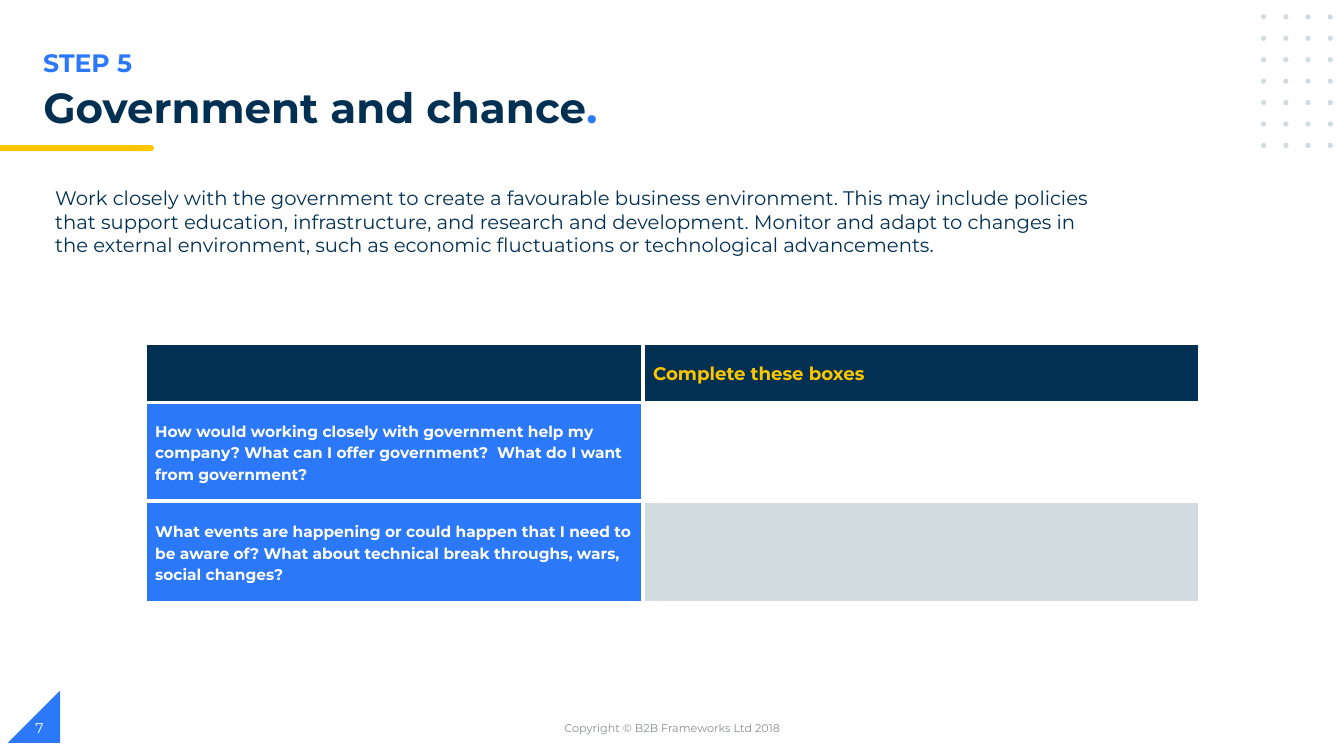
from lxml import etree
from pptx import Presentation, util as u
from pptx.dml.color import RGBColor
from pptx.enum import shapes, text
from pptx.oxml import ns

NAVY = RGBColor(0x02, 0x30, 0x53)
BLUE = RGBColor(0x2B, 0x79, 0xF8)
YELLOW = RGBColor(0xFF, 0xC6, 0x00)
PALE = RGBColor(0xD1, 0xDB, 0xE0)
GREY = RGBColor(0x88, 0x8C, 0x97)
WHITE = RGBColor(0xFF, 0xFF, 0xFF)
FONT = "Montserrat"

HEADING = [("Government and chance", NAVY), (".", BLUE)]
HEADING_BOX = (0.84, 2.08, 26.29, 1.42)
ADVICE = (
    "Work closely with the government to create a favourable business environment. "
    "This may include policies that support education, infrastructure, and research "
    "and development. Monitor and adapt to changes in the external environment, such "
    "as economic fluctuations or technological advancements."
)
TOP, MIDDLE = text.MSO_ANCHOR.TOP, text.MSO_ANCHOR.MIDDLE
LEFT, CENTER = text.PP_ALIGN.LEFT, text.PP_ALIGN.CENTER
LABELS = [
    ("STEP 5", (0.84, 1.07, 17, 1.02), 18, BLUE, True, TOP, LEFT),
    (ADVICE, (1.14, 4.57, 27.03, 2.06), 14, NAVY, False, TOP, LEFT),
    ("Copyright © B2B Frameworks Ltd 2018", (11.23, 17.83, 11.43, 1.02), 8, GREY, False, MIDDLE, CENTER),
    ("7", (0.64, 17.83, 7.62, 1.02), 10, WHITE, False, MIDDLE, LEFT),
]
QUESTIONS = [
    [("", NAVY), ("Complete these boxes", NAVY)],
    [("How would working closely with government help my company? "
      "What can I offer government?  What do I want from government?", BLUE), ("", WHITE)],
    [("What events are happening or could happen that I need to be aware of? "
      "What about technical break throughs, wars, social changes?", BLUE), ("", PALE)],
]
COLUMN_WIDTHS = [12.55, 14.02]
ROW_HEIGHTS = [1.5, 2.49, 2.57]
TABLE_LEFT, TABLE_TOP = 3.66, 8.64
DOT_COLUMNS, DOT_ROWS = 4, 7
DOT_LEFT, DOT_TOP, DOT_SIZE = 31.78, 0.36, 0.13
DOT_STEP_X, DOT_STEP_Y = 0.56, 0.54


def apply(target, values):
    """Set every attribute named in values on target."""
    for key, value in values.items():
        setattr(target, key, value)


def lengths(box):
    """Turn centimetre figures into slide lengths."""
    return [u.Cm(figure) for figure in box]


def draw(slide, kind, box, color):
    """Add a flat preset shape without outline."""
    mark = slide.shapes.add_shape(kind, *lengths(box))
    mark.shadow.inherit = False
    mark.fill.solid()
    mark.fill.fore_color.rgb = color
    mark.line.fill.background()
    return mark


def write(paragraph, wording, size, color, bold):
    """Add one formatted run to a paragraph."""
    run = paragraph.add_run()
    run.text = wording
    apply(run.font, {"name": FONT, "size": u.Pt(size), "bold": bold})
    run.font.color.rgb = color


def add_borders(cell):
    """Give a cell white borders on all four sides."""
    properties = cell._tc.get_or_add_tcPr()
    for side in ("a:lnL", "a:lnR", "a:lnT", "a:lnB"):
        border = etree.SubElement(properties, ns.qn(side), w=str(u.Pt(3)))
        fill = etree.SubElement(border, ns.qn("a:solidFill"))
        etree.SubElement(fill, ns.qn("a:srgbClr"), val=str(WHITE))


def add_decoration(slide):
    """Draw the corner triangle, heading rule and dot grid."""
    kinds = shapes.MSO_SHAPE
    corner = draw(slide, kinds.RIGHT_TRIANGLE, (0.2, 17.4, 1.32, 1.32), BLUE)
    corner._element.spPr.xfrm.set("flipH", "1")
    draw(slide, kinds.FLOWCHART_TERMINATOR, (3.4, 3.66, 0.48, 0.15), YELLOW)
    draw(slide, kinds.RECTANGLE, (0, 3.66, 3.58, 0.15), YELLOW)
    for row in range(DOT_ROWS):
        for column in range(DOT_COLUMNS):
            left = DOT_LEFT + column * DOT_STEP_X
            top = DOT_TOP + row * DOT_STEP_Y
            draw(slide, kinds.OVAL, (left, top, DOT_SIZE, DOT_SIZE), PALE)


def add_heading(slide):
    """Place and fill the title placeholder."""
    heading = slide.shapes.title
    apply(heading, dict(zip(("left", "top", "width", "height"), lengths(HEADING_BOX))))
    apply(heading.text_frame, {"vertical_anchor": TOP, "word_wrap": True,
                               "auto_size": text.MSO_AUTO_SIZE.NONE})
    paragraph = heading.text_frame.paragraphs[0]
    apply(paragraph, {"alignment": LEFT, "line_spacing": 0.9})
    for wording, color in HEADING:
        write(paragraph, wording, 30, color, True)


def add_labels(slide):
    """Add the step label, advice, copyright line and page number."""
    for wording, box, size, color, bold, anchor, alignment in LABELS:
        frame = slide.shapes.add_textbox(*lengths(box)).text_frame
        apply(frame, {"word_wrap": True, "vertical_anchor": anchor})
        frame.paragraphs[0].alignment = alignment
        write(frame.paragraphs[0], wording, size, color, bold)


def add_questions(slide):
    """Add the table of questions and answer boxes."""
    box = (TABLE_LEFT, TABLE_TOP, sum(COLUMN_WIDTHS), sum(ROW_HEIGHTS))
    grid = slide.shapes.add_table(len(ROW_HEIGHTS), len(COLUMN_WIDTHS), *lengths(box)).table
    for column, width in zip(grid.columns, COLUMN_WIDTHS):
        column.width = u.Cm(width)
    for row, height in zip(grid.rows, ROW_HEIGHTS):
        row.height = u.Cm(height)
    for i, entries in enumerate(QUESTIONS):
        size, color = (13, YELLOW) if i == 0 else (11, WHITE)
        for j, (wording, fill) in enumerate(entries):
            cell = grid.cell(i, j)
            add_borders(cell)
            cell.fill.solid()
            cell.fill.fore_color.rgb = fill
            apply(cell, {"vertical_anchor": MIDDLE, "margin_left": u.Cm(0.25),
                         "margin_right": u.Cm(0.25), "margin_top": 0, "margin_bottom": 0})
            if wording:
                paragraph = cell.text_frame.paragraphs[0]
                paragraph.line_spacing = 1.15
                write(paragraph, wording, size, color, True)


def main():
    """Build the slide and save it."""
    deck = Presentation()
    apply(deck, {"slide_width": u.Cm(33.87), "slide_height": u.Cm(19.05)})
    slide = deck.slides.add_slide(deck.slide_layouts[5])
    add_decoration(slide)
    add_heading(slide)
    add_labels(slide)
    add_questions(slide)
    deck.save("out.pptx")


if __name__ == "__main__":
    main()
